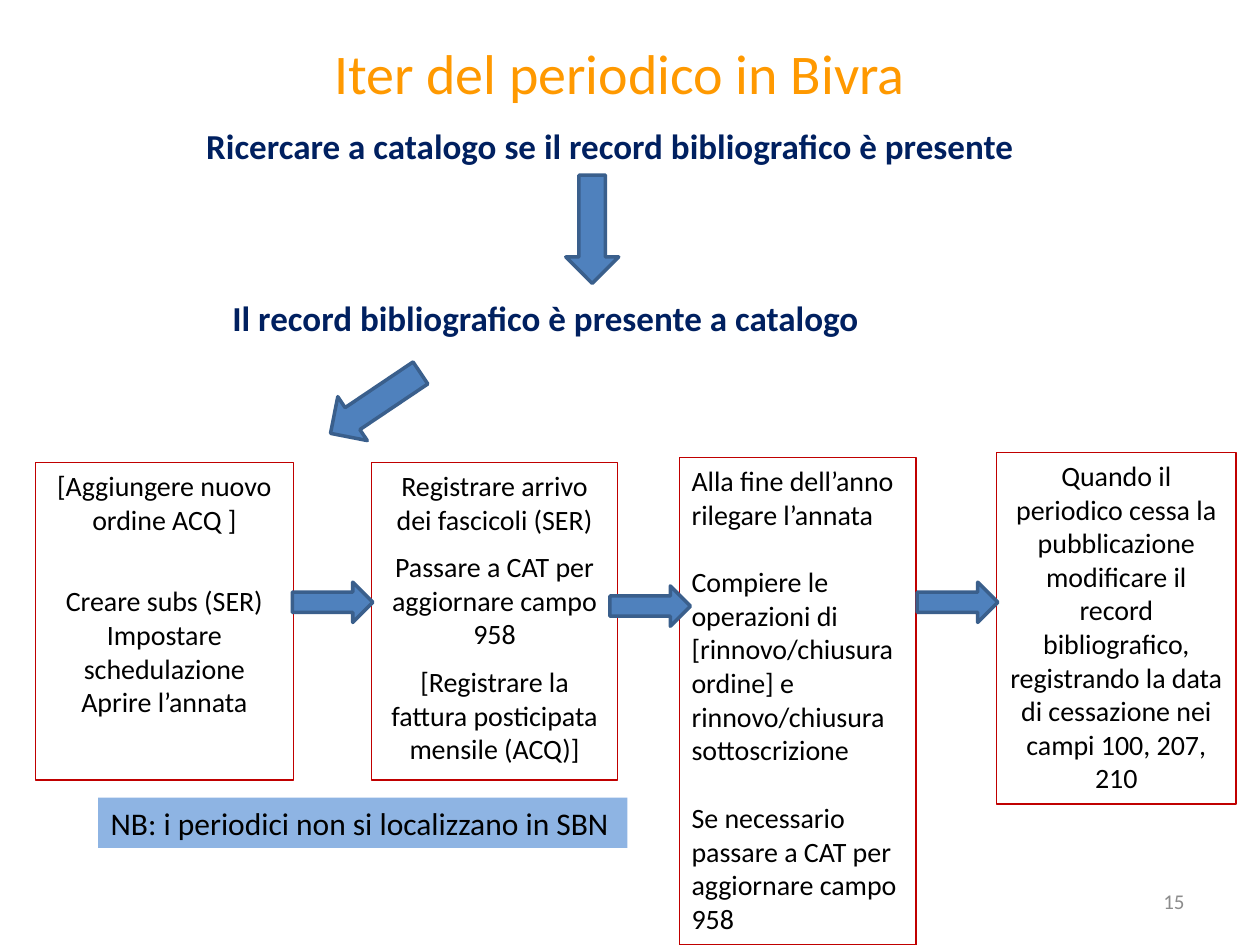
from dataclasses import dataclass

from pptx import Presentation
from pptx.dml.color import RGBColor
from pptx.enum import shapes, text
from pptx.util import Inches, Pt

ALIGN = text.PP_ALIGN
ANCHOR = text.MSO_ANCHOR
SHAPE = shapes.MSO_SHAPE


@dataclass(frozen=True)
class Theme:
    font: str = "Calibri"
    title: str = "FF9900"
    heading: str = "002060"
    body: str = "000000"
    muted: str = "8C8C8C"
    border: str = "C00000"
    arrow: str = "4F81BD"
    arrow_line: str = "3A5F8C"
    note: str = "8EB4E3"
    title_size: int = 32
    heading_size: int = 20
    note_size: int = 18
    body_size: int = 16
    number_size: int = 12


def write(shape, paragraphs, *, font, size, color, bold=False, align=ALIGN.CENTER,
          anchor=ANCHOR.TOP, line_spacing=None, wrap=True):
    frame = shape.text_frame
    frame.word_wrap = wrap
    frame.auto_size = text.MSO_AUTO_SIZE.NONE
    frame.vertical_anchor = anchor
    for index, (content, space_before) in enumerate(paragraphs):
        paragraph = frame.add_paragraph() if index else frame.paragraphs[0]
        paragraph.text = content
        paragraph.alignment = align
        paragraph.space_before = Pt(space_before)
        if line_spacing:
            paragraph.line_spacing = line_spacing
        paragraph.font.name = font
        paragraph.font.size = Pt(size)
        paragraph.font.bold = bold
        paragraph.font.color.rgb = RGBColor.from_string(color)


class SlideBuilder:
    def __init__(self, slide, theme):
        self.slide = slide
        self.theme = theme

    def title(self, content, left, top, width, height):
        shape = self.slide.shapes.title
        shape.left, shape.top = Inches(left), Inches(top)
        shape.width, shape.height = Inches(width), Inches(height)
        write(shape, [(content, 0)], font=self.theme.font, size=self.theme.title_size,
              color=self.theme.title, anchor=ANCHOR.MIDDLE)

    def label(self, content, left, top, width, height, **style):
        shape = self.slide.shapes.add_textbox(
            Inches(left), Inches(top), Inches(width), Inches(height))
        write(shape, [(content, 0)], font=self.theme.font, anchor=ANCHOR.MIDDLE, **style)

    def heading(self, content, left, top, width, height):
        self.label(content, left, top, width, height, size=self.theme.heading_size,
                   color=self.theme.heading, bold=True, line_spacing=0.9)

    def number(self, content, left, top, width, height):
        self.label(content, left, top, width, height, size=self.theme.number_size,
                   color=self.theme.muted, align=ALIGN.RIGHT)

    def shape(self, kind, left, top, width, height, fill=None, line=None, line_width=0.75):
        shape = self.slide.shapes.add_shape(
            kind, Inches(left), Inches(top), Inches(width), Inches(height))
        shape.shadow.inherit = False
        if fill:
            shape.fill.solid()
            shape.fill.fore_color.rgb = RGBColor.from_string(fill)
        else:
            shape.fill.background()
        if line:
            shape.line.color.rgb = RGBColor.from_string(line)
            shape.line.width = Pt(line_width)
        else:
            shape.line.fill.background()
        return shape

    def step(self, paragraphs, left, top, width, height, align=ALIGN.CENTER):
        shape = self.shape(SHAPE.RECTANGLE, left, top, width, height, line=self.theme.border)
        write(shape, paragraphs, font=self.theme.font, size=self.theme.body_size,
              color=self.theme.body, align=align)

    def note(self, content, left, top, width, height):
        shape = self.shape(SHAPE.RECTANGLE, left, top, width, height, fill=self.theme.note)
        write(shape, [(content, 0)], font=self.theme.font, size=self.theme.note_size,
              color=self.theme.body, align=ALIGN.LEFT, wrap=False)

    def arrow(self, kind, left, top, width, height, rotation=0):
        shape = self.shape(kind, left, top, width, height, fill=self.theme.arrow,
                           line=self.theme.arrow_line, line_width=2)
        shape.rotation = rotation


def main():
    presentation = Presentation()
    presentation.slide_width, presentation.slide_height = Inches(10), Inches(7.5)
    slide = presentation.slides.add_slide(presentation.slide_layouts[5])
    builder = SlideBuilder(slide, Theme())

    builder.title("Iter del periodico in Bivra", 0.67, 0.13, 8.5, 0.89)
    builder.heading("Ricercare a catalogo se il record bibliografico è presente",
                    0.62, 0.94, 8.44, 0.47)
    builder.heading("Il record bibliografico è presente a catalogo", 1.05, 2.34, 6.56, 0.4)

    half_line, full_line = 8, 19.5
    builder.step([
        ("[Aggiungere nuovo ordine ACQ ]", 0),
        ("Creare subs (SER)", half_line + full_line),
        ("Impostare schedulazione", 0),
        ("Aprire l’annata", 0),
    ], 0.28, 3.67, 2.05, 2.52)
    builder.step([
        ("Registrare arrivo dei fascicoli (SER)", 0),
        ("Passare a CAT per aggiornare campo 958", half_line),
        ("[Registrare la fattura posticipata mensile (ACQ)]", half_line),
    ], 2.95, 3.67, 1.95, 2.52)
    builder.step([
        ("Alla fine dell’anno rilegare l’annata", 0),
        ("Compiere le operazioni di [rinnovo/chiusura ordine] e rinnovo/chiusura "
         "sottoscrizione", full_line),
        ("Se necessario passare a CAT per aggiornare campo 958", full_line),
    ], 5.39, 3.63, 1.88, 3.87, align=ALIGN.LEFT)
    builder.step([
        ("Quando il periodico cessa la pubblicazione modificare il record bibliografico, "
         "registrando la data di cessazione nei campi 100, 207, 210", 0),
    ], 7.91, 3.59, 1.9, 2.79)

    for left, top, rotation in ((4.49, 1.39, 0), (2.77, 2.77, 56.1)):
        builder.arrow(SHAPE.DOWN_ARROW, left, top, 0.42, 0.86, rotation)
    for left, top in ((2.32, 4.62), (4.84, 4.65), (7.28, 4.62)):
        builder.arrow(SHAPE.RIGHT_ARROW, left, top, 0.64, 0.32)

    builder.note("NB: i periodici non si localizzano in SBN", 0.78, 6.33, 4.2, 0.4)
    builder.number("15", 7.17, 6.95, 2.33, 0.4)
    presentation.save("out.pptx")


if __name__ == "__main__":
    main()
